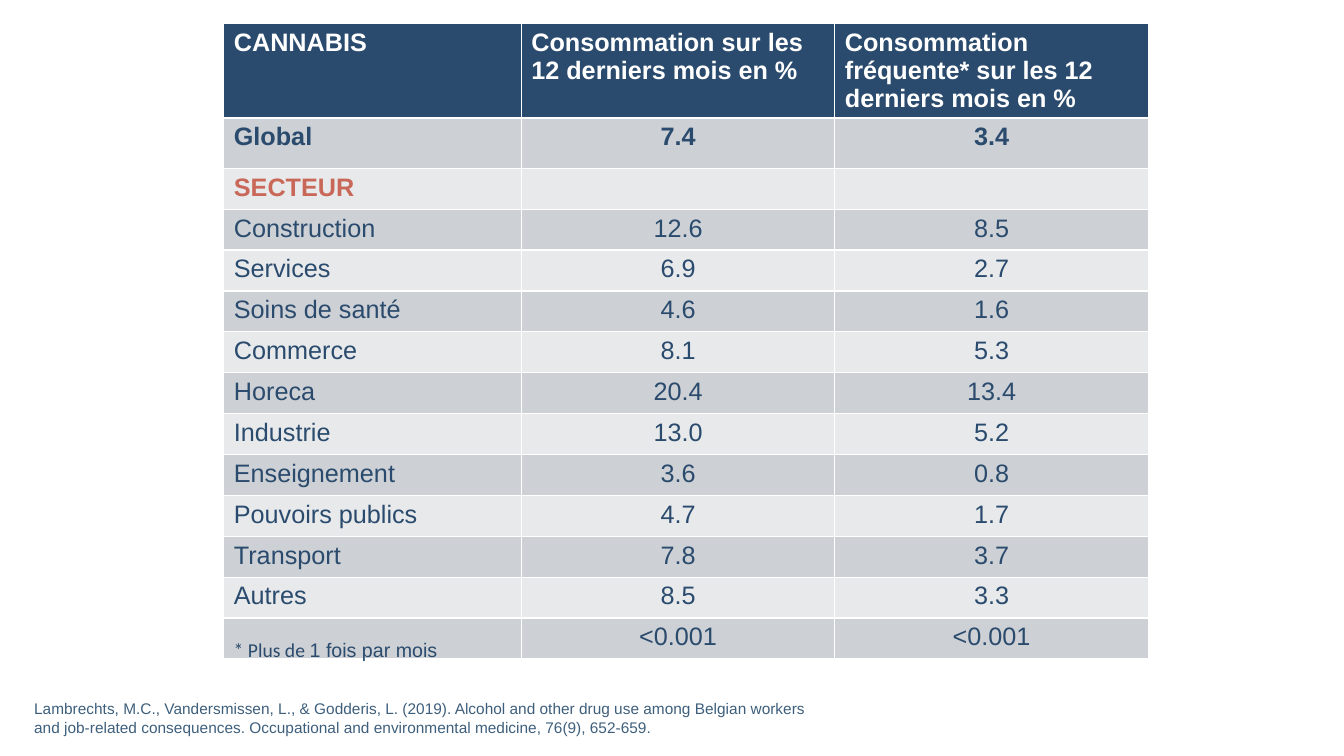
from dataclasses import dataclass
from typing import NamedTuple

from lxml.etree import SubElement
from pptx import Presentation
from pptx.dml.color import RGBColor
from pptx.enum.text import MSO_AUTO_SIZE, PP_ALIGN
from pptx.oxml.ns import qn
from pptx.slide import Slide
from pptx.table import _Cell
from pptx.text.text import TextFrame
from pptx.util import Inches, Pt


@dataclass(frozen=True)
class Theme:
    navy: str = "2A4B6D"
    coral: str = "C96858"
    slate: str = "3E5F7C"
    white: str = "FFFFFF"
    dark_band: str = "CDD0D4"
    light_band: str = "E8E9EB"
    font: str = "Arial"
    note_font: str = "Calibri"
    table_size: int = 18
    note_size: int = 14
    source_size: int = 11
    border_width: int = 1


class TableRow(NamedTuple):
    label: str
    consumption: str = ""
    frequent: str = ""
    color: str = Theme.navy
    bold: bool = False


class Note(NamedTuple):
    left: float
    top: float
    width: float
    height: float
    runs: list[tuple[str, str]]
    size: int
    color: str
    spacing: float = 1.0


THEME = Theme()
COLUMN_WIDTHS = (2.95, 3.11, 3.11)
HEADER_HEIGHT, GLOBAL_HEIGHT, SECTORS_HEIGHT = 0.76, 0.5, 4.87

ROWS = [
    TableRow("CANNABIS", "Consommation sur les 12 derniers mois en %",
             "Consommation fréquente* sur les 12 derniers mois en %", THEME.white, True),
    TableRow("Global", "7.4", "3.4", bold=True),
    TableRow("SECTEUR", color=THEME.coral, bold=True),
    TableRow("Construction", "12.6", "8.5"),
    TableRow("Services", "6.9", "2.7"),
    TableRow("Soins de santé", "4.6", "1.6"),
    TableRow("Commerce", "8.1", "5.3"),
    TableRow("Horeca", "20.4", "13.4"),
    TableRow("Industrie", "13.0", "5.2"),
    TableRow("Enseignement", "3.6", "0.8"),
    TableRow("Pouvoirs publics", "4.7", "1.7"),
    TableRow("Transport", "7.8", "3.7"),
    TableRow("Autres", "8.5", "3.3"),
    TableRow("", "<0.001", "<0.001"),
]

NOTES = [
    Note(0.24, 6.89, 8.08, 0.47, [(
        "Lambrechts, M.C., Vandersmissen, L., & Godderis, L. (2019). "
        "Alcohol and other drug use among Belgian workers and job-related consequences. "
        "Occupational and environmental medicine, 76(9), 652-659.", THEME.font)],
        THEME.source_size, THEME.slate),
    Note(2.22, 6.24, 3.24, 0.35,
         [("* Plus de ", THEME.note_font), ("1 fois par mois", THEME.font)],
         THEME.note_size, THEME.navy, 1.15),
]


def add_text(frame: TextFrame, text: str, *, size: int, color: str, font: str = THEME.font,
             bold: bool = False, align: PP_ALIGN = PP_ALIGN.LEFT) -> None:
    """Append a formatted run to the first paragraph of a frame."""
    paragraph = frame.paragraphs[0]
    paragraph.alignment = align
    run = paragraph.add_run()
    run.text = text
    run.font.name = font
    run.font.size = Pt(size)
    run.font.bold = bold
    run.font.color.rgb = RGBColor.from_string(color)


def style_cell(cell: _Cell, fill: str) -> None:
    """Give a cell white borders and a solid fill."""
    properties = cell._tc.get_or_add_tcPr()
    for side in ("lnL", "lnR", "lnT", "lnB"):
        line = SubElement(properties, qn(f"a:{side}"), w=str(Pt(THEME.border_width)))
        solid = SubElement(line, qn("a:solidFill"))
        SubElement(solid, qn("a:srgbClr"), val=THEME.white)
    cell.fill.solid()
    cell.fill.fore_color.rgb = RGBColor.from_string(fill)


def add_cannabis_table(slide: Slide) -> None:
    """Draw the banded table of consumption by sector."""
    table = slide.shapes.add_table(
        len(ROWS), len(COLUMN_WIDTHS), Inches(2.22), Inches(0.23),
        Inches(sum(COLUMN_WIDTHS)), Inches(HEADER_HEIGHT + GLOBAL_HEIGHT + SECTORS_HEIGHT)).table
    for column, width in zip(table.columns, COLUMN_WIDTHS):
        column.width = Inches(width)
    sector_height = SECTORS_HEIGHT / (len(ROWS) - 2)
    heights = [HEADER_HEIGHT, GLOBAL_HEIGHT] + [sector_height] * (len(ROWS) - 2)
    for index, (row, height) in enumerate(zip(ROWS, heights)):
        table.rows[index].height = Inches(height)
        band = THEME.dark_band if index % 2 else THEME.light_band
        for column, text in enumerate((row.label, row.consumption, row.frequent)):
            cell = table.cell(index, column)
            style_cell(cell, band if index else THEME.navy)
            if text:
                add_text(cell.text_frame, text, size=THEME.table_size, color=row.color,
                         bold=row.bold,
                         align=PP_ALIGN.CENTER if index and column else PP_ALIGN.LEFT)


def add_note(slide: Slide, note: Note) -> None:
    """Draw a wrapped text box below or over the table."""
    frame = slide.shapes.add_textbox(Inches(note.left), Inches(note.top),
                                     Inches(note.width), Inches(note.height)).text_frame
    frame.word_wrap = True
    frame.auto_size = MSO_AUTO_SIZE.SHAPE_TO_FIT_TEXT
    frame.paragraphs[0].line_spacing = note.spacing
    for text, font in note.runs:
        add_text(frame, text, size=note.size, color=note.color, font=font)


def main() -> None:
    """Build the slide and save it."""
    presentation = Presentation()
    presentation.slide_width = Inches(13.33)
    presentation.slide_height = Inches(7.5)
    slide = presentation.slides.add_slide(presentation.slide_layouts[6])
    add_cannabis_table(slide)
    for note in NOTES:
        add_note(slide, note)
    presentation.save("out.pptx")


if __name__ == "__main__":
    main()
